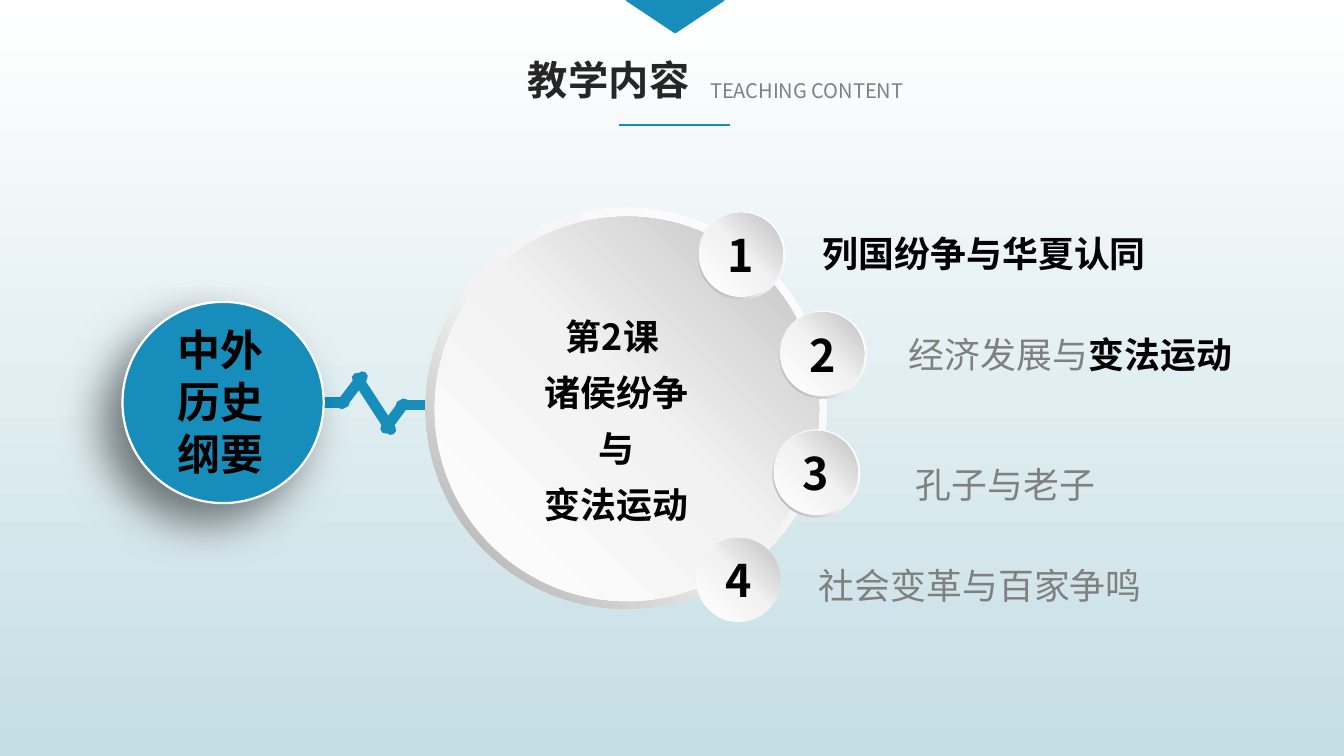
from dataclasses import dataclass

from lxml import etree
from pptx import Presentation
from pptx.dml.color import RGBColor
from pptx.enum.shapes import MSO_CONNECTOR, MSO_SHAPE
from pptx.enum.text import MSO_ANCHOR, MSO_AUTO_SIZE, PP_ALIGN
from pptx.oxml.ns import qn
from pptx.util import Inches, Pt

ELLIPSE, DONUT = MSO_SHAPE.OVAL, MSO_SHAPE.DONUT
TRIANGLE = MSO_SHAPE.ISOSCELES_TRIANGLE
STRAIGHT = MSO_CONNECTOR.STRAIGHT
LEFT, CENTER = PP_ALIGN.LEFT, PP_ALIGN.CENTER
MIDDLE = MSO_ANCHOR.MIDDLE
GROW = MSO_AUTO_SIZE.SHAPE_TO_FIT_TEXT


@dataclass(frozen=True)
class Theme:
    """Colours, gradients, font and type sizes of the slide."""
    font: str = "Noto Sans CJK SC"
    accent: str = "178DBB"
    white: str = "FFFFFF"
    black: str = "000000"
    heading: str = "262626"
    muted: str = "808080"
    backdrop: tuple = ((0, "FFFFFF"), (100, "C5DEE5"))
    ring: tuple = ((0, "FFFFFF"), (55, "F2F2F2"), (100, "A6A6A6"))
    disc: tuple = ((0, "FFFFFF"), (51, "F2F2F2"), (100, "BFBFBF"))
    caption_size: float = 11.2
    item_size: float = 20
    heading_size: float = 22.5
    course_size: float = 24
    number_size: float = 25


THEME = Theme()
NO_INSETS = (0, 0, 0, 0)
DEFAULT_INSETS = (0.1, 0.05, 0.1, 0.05)


def set_gradient(fill, element, stops, angle):
    """Fill with colour stops along an angle measured counter-clockwise."""
    fill.gradient()
    fill.gradient_angle = angle
    stop_list = element.find(f".//{qn('a:gsLst')}")
    for stop in list(stop_list):
        stop_list.remove(stop)
    for position, color in stops:
        stop = etree.SubElement(stop_list, qn("a:gs"), pos=str(position * 1000))
        etree.SubElement(stop, qn("a:srgbClr"), val=color)


def add_run(paragraph, text, size, color, bold=False):
    """Add one styled run to a paragraph."""
    run = paragraph.add_run()
    run.text = text
    font = run.font
    font.size, font.bold = Pt(size), bold
    font.color.rgb = RGBColor.from_string(color)
    font.name = THEME.font
    etree.SubElement(run._r.get_or_add_rPr(), qn("a:ea"), typeface=THEME.font)


def add_text(slide, box, paragraphs, align=LEFT, spacing=None,
             insets=NO_INSETS, wrap=True):
    """Add a text box from paragraphs, each a list of runs."""
    frame = slide.shapes.add_textbox(*map(Inches, box)).text_frame
    frame.word_wrap, frame.auto_size = wrap, GROW
    (frame.margin_left, frame.margin_top,
     frame.margin_right, frame.margin_bottom) = map(Inches, insets)
    for index, runs in enumerate(paragraphs):
        paragraph = frame.add_paragraph() if index else frame.paragraphs[0]
        paragraph.alignment = align
        if spacing:
            paragraph.line_spacing = spacing
        for run in runs:
            add_run(paragraph, *run)


def add_solid(slide, kind, box, line_color):
    """Add an accent-filled shape with an outline."""
    shape = slide.shapes.add_shape(kind, *map(Inches, box))
    shape.shadow.inherit = False
    shape.fill.solid()
    shape.fill.fore_color.rgb = RGBColor.from_string(THEME.accent)
    shape.line.color.rgb = RGBColor.from_string(line_color)
    shape.line.width = Pt(1.25)
    return shape


def add_round(slide, kind, left, top, size, stops, angle):
    """Add a round gradient shape without an outline."""
    shape = slide.shapes.add_shape(kind, *map(Inches, (left, top, size, size)))
    shape.shadow.inherit = False
    shape.line.fill.background()
    set_gradient(shape.fill, shape._element, stops, angle)
    return shape


def add_ring(slide, left, top, size):
    """Add a thin shaded ring."""
    ring = add_round(slide, DONUT, left, top, size, THEME.ring, 225)
    ring.adjustments[0] = 0.05


def add_disc(slide, left, top, size):
    """Add a pale shaded disc."""
    return add_round(slide, ELLIPSE, left, top, size, THEME.disc, 45)


def add_number(slide, number, left, top):
    """Add a disc that carries a number."""
    frame = add_disc(slide, left, top, 0.65).text_frame
    frame.vertical_anchor = MIDDLE
    paragraph = frame.paragraphs[0]
    paragraph.alignment = CENTER
    add_run(paragraph, str(number), THEME.number_size, THEME.black, True)


def add_line(slide, start, end, width, cap="flat"):
    """Add a straight accent line."""
    line = slide.shapes.add_connector(STRAIGHT, *map(Inches, start + end))
    line.line.color.rgb = RGBColor.from_string(THEME.accent)
    line.line.width = Pt(width)
    line.line._get_or_add_ln().set("cap", cap)
    etree.SubElement(line._element.spPr, qn("a:effectLst"))


def add_shadow(shape):
    """Cast a soft half-transparent shadow to the lower left."""
    effects = shape._element.spPr.find(qn("a:effectLst"))
    shadow = etree.SubElement(
        effects, qn("a:outerShdw"), blurRad=str(Pt(25)), dist=str(Pt(15)),
        dir=str(135 * 60000), algn="ctr", rotWithShape="0")
    color = etree.SubElement(shadow, qn("a:srgbClr"), val=THEME.black)
    etree.SubElement(color, qn("a:alpha"), val="50000")


def add_header(slide):
    """Add the title, its caption, the top marker and the underline."""
    add_text(slide, (5.41, 0.59, 1.69, 0.23),
             [[("TEACHING CONTENT", THEME.caption_size, THEME.muted)]],
             CENTER, insets=(0.04, 0.02, 0.04, 0.02), wrap=False)
    add_text(slide, (3.99, 0.38, 1.46, 0.48),
             [[("教学内容", THEME.heading_size, THEME.heading, True)]],
             CENTER, insets=DEFAULT_INSETS, wrap=False)
    marker = add_solid(slide, TRIANGLE, (4.86, 0, 0.75, 0.25), THEME.accent)
    marker.rotation = 180
    add_line(slide, (4.8, 0.97), (5.66, 0.97), 0.75)


def add_course(slide):
    """Add the course circle and the pulse line leading to the lesson."""
    pulse = (((2.18, 3.12), (2.67, 3.12)), ((3.11, 3.14), (3.52, 3.14)),
             ((2.65, 3.13), (2.81, 2.92)), ((2.99, 3.32), (3.13, 3.13)),
             ((3.03, 3.33), (2.77, 2.93)))
    for start, end in pulse:
        add_line(slide, start, end, 6, "rnd")
    circle = add_solid(slide, ELLIPSE, (0.95, 2.34, 1.56, 1.56), THEME.white)
    add_shadow(circle)
    add_text(slide, (1.25, 2.51, 0.92, 1.21),
             [[("中外历史纲要", THEME.course_size, THEME.black, True)]], CENTER)


def add_lesson(slide):
    """Add the large lesson disc with its title."""
    add_ring(slide, 3.3, 1.61, 3.11)
    add_disc(slide, 3.37, 1.68, 2.98)
    lines = ("第2课 ", "诸侯纷争", "与", "变法运动")
    add_text(slide, (3.82, 2.34, 1.92, 1.75),
             [[(line, THEME.item_size, THEME.black, True)] for line in lines],
             CENTER, 1.3)


def add_topics(slide):
    """Add the numbered discs and the topic beside each."""
    for number, (left, top) in enumerate(
            ((5.41, 1.64), (6.04, 2.41), (5.99, 3.33)), 1):
        add_ring(slide, left, top, 0.68)
        add_number(slide, number, left + 0.01, top + 0.01)
    add_number(slide, 4, 5.4, 4.17)
    size, muted, black = THEME.item_size, THEME.muted, THEME.black
    add_text(slide, (6.38, 1.63, 2.98, 0.5),
             [[("列国纷争与华夏认同", size, black, True)]], spacing=1.5)
    add_text(slide, (6.92, 2.58, 2.76, 0.34),
             [[("经济发展与", size, muted), ("变法运动", size, black, True)]],
             CENTER)
    add_text(slide, (7.1, 3.42, 3.03, 0.5),
             [[("孔子与老子", size, muted)]], spacing=1.5)
    add_text(slide, (6.25, 4.32, 2.73, 0.44),
             [[("社会变革与百家争鸣", size, muted)]],
             insets=DEFAULT_INSETS, wrap=False)


def main():
    """Build the slide and save it."""
    presentation = Presentation()
    presentation.slide_width = Inches(10.42)
    presentation.slide_height = Inches(5.86)
    slide = presentation.slides.add_slide(presentation.slide_layouts[6])
    set_gradient(slide.background.fill, slide._element, THEME.backdrop, 270)
    add_header(slide)
    add_course(slide)
    add_lesson(slide)
    add_topics(slide)
    presentation.save("out.pptx")


if __name__ == "__main__":
    main()
